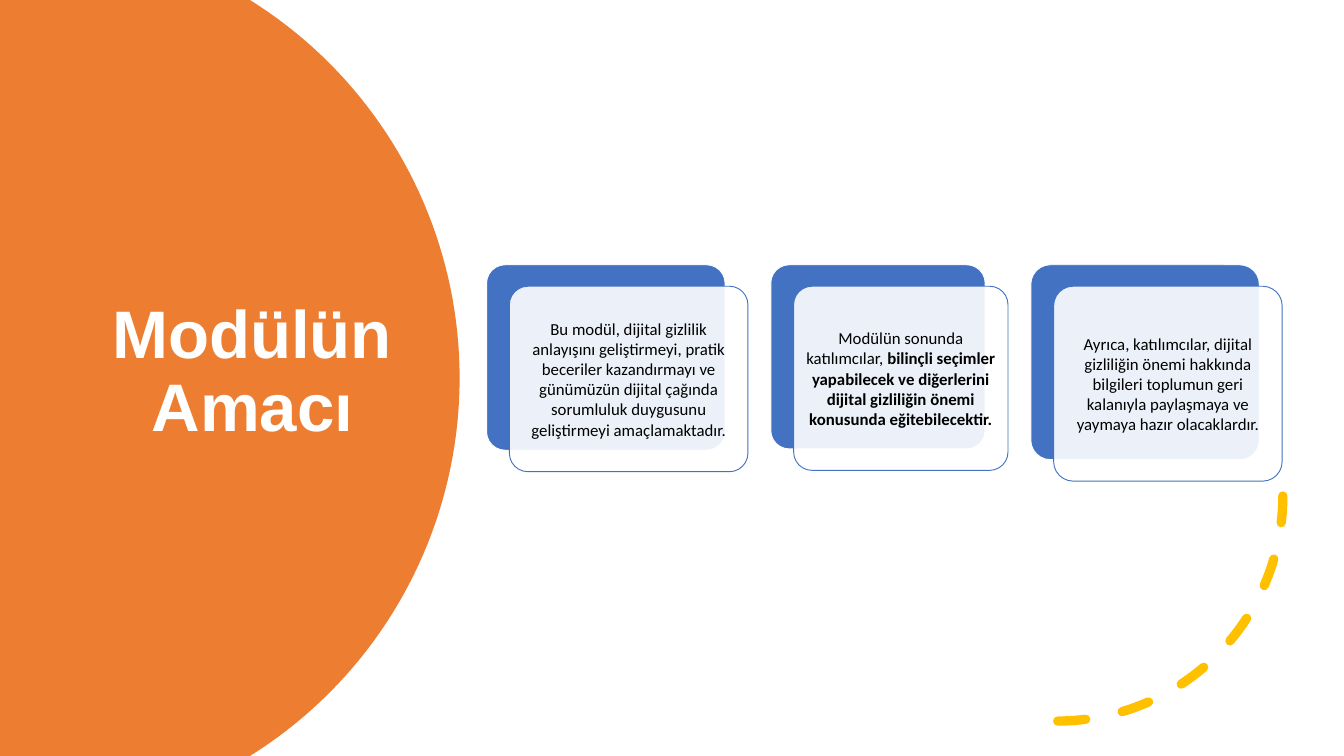
import math

from lxml import etree
from pptx import Presentation
from pptx.dml.color import RGBColor
from pptx.enum import dml, shapes, text
from pptx.oxml import ns
from pptx.util import Inches, Pt

# Content: each card has a width, a height and runs of (wording, bold)
TITLE = "Modülün Amacı"
CARDS = [
    (3.55, 2.76, [
        ("Bu modül, dijital gizlilik anlayışını geliştirmeyi, pratik beceriler "
         "kazandırmayı ve günümüzün dijital çağında sorumluluk duygusunu "
         "geliştirmeyi amaçlamaktadır.", False)]),
    (3.19, 2.74, [
        ("Modülün sonunda katılımcılar, ", False),
        ("bilinçli seçimler yapabilecek ve diğerlerini dijital gizliliğin önemi "
         "konusunda eğitebilecektir.", True)]),
    (3.4, 2.9, [
        ("Ayrıca, katılımcılar, dijital gizliliğin önemi hakkında bilgileri "
         "toplumun geri kalanıyla paylaşmaya ve yaymaya hazır olacaklardır.", False)]),
]

THEME = {
    "orange": RGBColor.from_string("ED7D31"),
    "blue": RGBColor.from_string("4372C3"),
    "yellow": RGBColor.from_string("FFC000"),
    "white": RGBColor.from_string("FFFFFF"),
    "black": RGBColor.from_string("000000"),
    "title": ("Arial", 72),
    "body": ("Calibri", 18),
}

# Layout in inches
WIDTH, HEIGHT = 20, 11.25
CIRCLE_X, CIRCLE_RADIUS, CIRCLE_STEPS = 0.21, 6.63, 80
CARDS_LEFT, CARDS_TOP = 7.24, 3.94
SHIFT_X, SHIFT_Y = 0.34, 0.32
TEXT_INSET = 0.08


def add_text(slide, box, runs, font, color, margins, line_spacing=1.0):
    """Add a centred text box; runs are (wording, bold)."""
    frame = slide.shapes.add_textbox(*map(Inches, box)).text_frame
    frame.word_wrap = True
    frame.vertical_anchor = text.MSO_ANCHOR.MIDDLE
    frame.margin_left = frame.margin_right = Inches(margins[0])
    frame.margin_top = frame.margin_bottom = Inches(margins[1])
    paragraph = frame.paragraphs[0]
    paragraph.alignment = text.PP_ALIGN.CENTER
    paragraph.line_spacing = line_spacing
    for wording, bold in runs:
        run = paragraph.add_run()
        run.text = wording
        run.font.name, run.font.size = font[0], Pt(font[1])
        run.font.bold = bold
        run.font.color.rgb = color


def add_panel(slide, box, fill, line, opacity=100):
    """Add one rounded panel of a card."""
    panel = slide.shapes.add_shape(
        shapes.MSO_SHAPE.ROUNDED_RECTANGLE, *map(Inches, box))
    panel.adjustments[0] = 0.1
    panel.shadow.inherit = False
    panel.fill.solid()
    panel.fill.fore_color.rgb = fill
    panel.line.color.rgb = line
    panel.line.width = Pt(1)
    if opacity < 100:
        color = panel.fill._xPr.find(".//" + ns.qn("a:srgbClr"))
        etree.SubElement(color, ns.qn("a:alpha"), val=str(opacity * 1000))


def add_circle_segment(slide):
    """Fill the part of a large circle that lies on the slide."""
    middle = HEIGHT / 2
    limit = math.asin(middle / CIRCLE_RADIUS)
    angles = [limit * (2 * step / CIRCLE_STEPS - 1) for step in range(CIRCLE_STEPS + 1)]
    edge = [(Inches(CIRCLE_X + CIRCLE_RADIUS * math.cos(angle)),
             Inches(middle + CIRCLE_RADIUS * math.sin(angle))) for angle in angles]
    builder = slide.shapes.build_freeform(0, 0)
    builder.add_line_segments(edge + [(0, Inches(HEIGHT))], close=True)
    segment = builder.convert_to_shape()
    segment.shadow.inherit = False
    segment.fill.solid()
    segment.fill.fore_color.rgb = THEME["orange"]
    segment.line.fill.background()


def add_dashed_arc(slide):
    """Draw the lower right quarter of a circle with round dashes."""
    arc = slide.shapes.add_shape(
        shapes.MSO_SHAPE.ARC, *map(Inches, (12.39, 4.03, 6.7, 6.7)))
    arc.rotation = 180
    arc._element.spPr.find(ns.qn("a:xfrm")).set("flipH", "1")
    arc.shadow.inherit = False
    arc.fill.background()
    arc.line.color.rgb = THEME["yellow"]
    arc.line.width = Pt(10)
    arc.line.dash_style = dml.MSO_LINE.DASH
    arc.line._ln.set("cap", "rnd")


def add_cards(slide):
    """Place the cards from left to right with equal gaps."""
    left = CARDS_LEFT
    for width, height, runs in CARDS:
        front_left, front_top = left + SHIFT_X, CARDS_TOP + SHIFT_Y
        add_panel(slide, (left, CARDS_TOP, width, height), THEME["blue"], THEME["white"])
        add_panel(slide, (front_left, front_top, width, height),
                  THEME["white"], THEME["blue"], opacity=90)
        text_box = (front_left + TEXT_INSET, front_top + TEXT_INSET,
                    width - 2 * TEXT_INSET, height - 2 * TEXT_INSET)
        add_text(slide, text_box, runs, THEME["body"], THEME["black"], (0.07, 0.07))
        left = front_left + width + SHIFT_X


def main():
    presentation = Presentation()
    presentation.slide_width, presentation.slide_height = Inches(WIDTH), Inches(HEIGHT)
    slide = presentation.slides.add_slide(presentation.slide_layouts[6])

    # Title side
    add_circle_segment(slide)
    add_text(slide, (1.13, 1.89, 5.25, 7.32), [(TITLE, True)],
             THEME["title"], THEME["white"], (0.1, 0.05), line_spacing=0.9)

    # Card side
    add_dashed_arc(slide)
    add_cards(slide)

    presentation.save("out.pptx")


if __name__ == "__main__":
    main()
